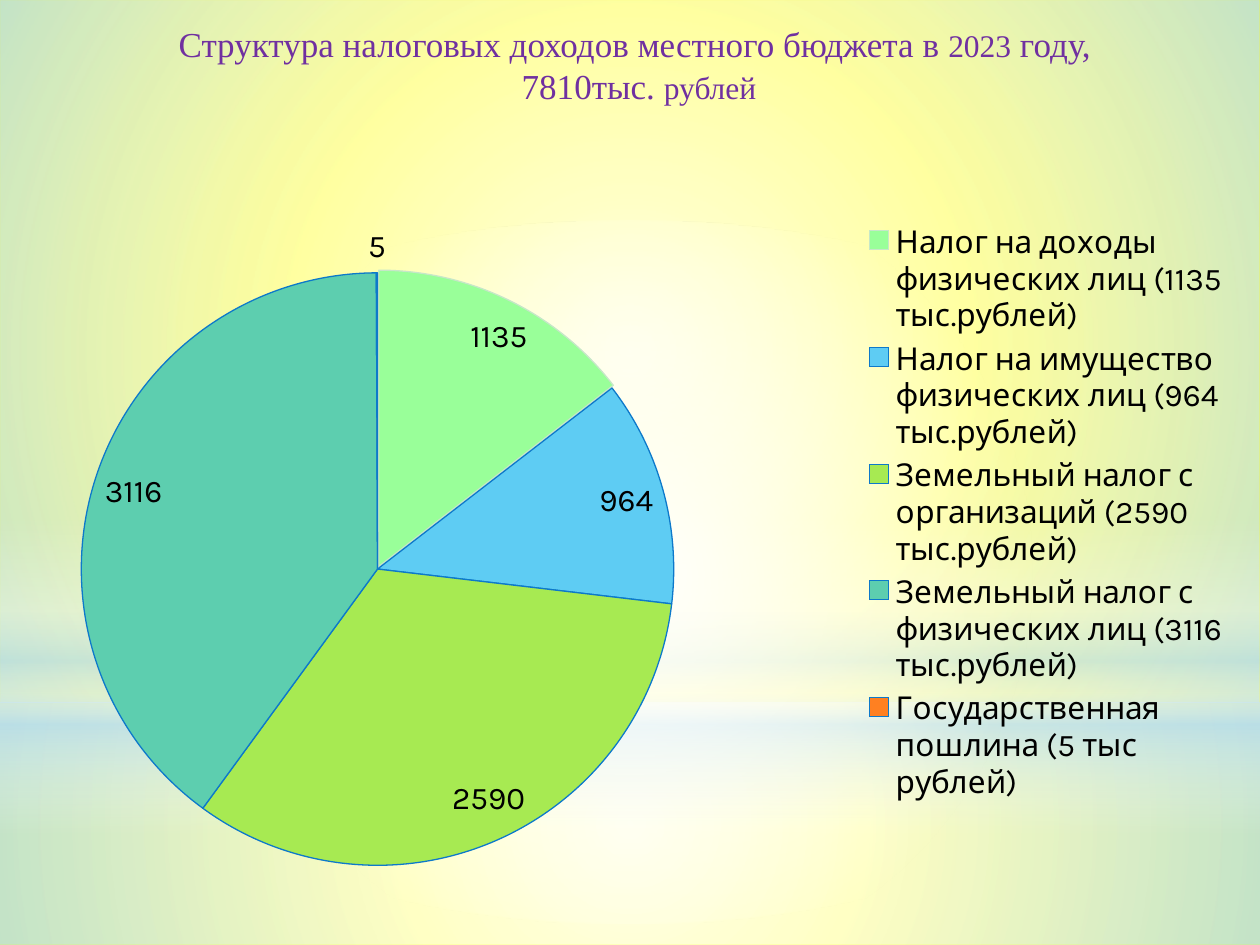
"""Build a slide with a pie chart of local budget tax revenue for 2023."""
from lxml import etree
from pptx import Presentation
from pptx.chart.data import CategoryChartData
from pptx.dml.color import RGBColor
from pptx.enum.chart import XL_CHART_TYPE, XL_LABEL_POSITION as LABEL, XL_LEGEND_POSITION as LEGEND
from pptx.enum.shapes import MSO_SHAPE as SHAPE
from pptx.enum.text import PP_ALIGN
from pptx.oxml import parse_xml
from pptx.oxml.ns import nsdecls, qn
from pptx.util import Emu, Pt

SCALE = 914400 / 126
YELLOW = RGBColor(0xFF, 0xFF, 0x00)
PURPLE = RGBColor(0x70, 0x30, 0xA0)
BLACK = RGBColor(0x00, 0x00, 0x00)
OUTLINE = RGBColor(0x0D, 0x79, 0xCA)
PALE = RGBColor(0xC6, 0xE7, 0xC8)
WHITE = RGBColor(0xFF, 0xFF, 0xFF)
SKY = RGBColor(0xB4, 0xDC, 0xFA)
RADIAL = '<a:path path="circle"><a:fillToRect l="50000" t="50000" r="50000" b="50000"/></a:path>'
VERTICAL = '<a:lin ang="5400000" scaled="0"/>'


def px(*lengths):
    return [Emu(round(length * SCALE)) for length in lengths]


def fill_gradient(shape, stops, direction):
    stop_xml = "".join(
        f'<a:gs pos="{position * 1000}"><a:srgbClr val="{color}">'
        f'<a:alpha val="{alpha * 1000}"/></a:srgbClr></a:gs>'
        for position, color, alpha in stops)
    gradient = parse_xml(f'<a:gradFill {nsdecls("a")} rotWithShape="1">'
                         f'<a:gsLst>{stop_xml}</a:gsLst>{direction}</a:gradFill>')
    shape._element.spPr.find(qn("a:prstGeom")).addnext(gradient)


presentation = Presentation()
presentation.slide_width, presentation.slide_height = px(1260, 945)
slide = presentation.slides.add_slide(presentation.slide_layouts[6])
slide.background.fill.solid()
slide.background.fill.fore_color.rgb = YELLOW

backdrop = [
    (SHAPE.RECTANGLE, (0, 703, 1260, 242), RADIAL,
     [(0, WHITE, 91), (37, WHITE, 76), (100, SKY, 79)]),
    (SHAPE.RECTANGLE, (0, 0, 1260, 703), RADIAL,
     [(0, WHITE, 89), (48, WHITE, 62), (100, SKY, 79)]),
    (SHAPE.RECTANGLE, (0, 519, 1260, 315), VERTICAL,
     [(0, WHITE, 0), (29, WHITE, 30), (45, SKY, 40),
      (55, WHITE, 26), (65, SKY, 60), (100, WHITE, 0)]),
    (SHAPE.OVAL, (0, 221, 1260, 703), RADIAL, [(0, WHITE, 100), (56, WHITE, 0)]),
]
for kind, box, direction, stops in backdrop:
    shape = slide.shapes.add_shape(kind, *px(*box))
    shape.shadow.inherit = False
    shape.line.fill.background()
    fill_gradient(shape, stops, direction)

taxes = [
    ("Налог на доходы физических лиц (1135 тыс.рублей)", 1135, "99FF99"),
    ("Налог на имущество физических лиц (964 тыс.рублей)", 964, "5ECCF3"),
    ("Земельный налог с организаций (2590 тыс.рублей)", 2590, "A7EA52"),
    ("Земельный налог с физических лиц (3116 тыс.рублей)", 3116, "5DCEAF"),
    ("Государственная пошлина (5 тыс рублей)", 5, "FF8021"),
]
chart_data = CategoryChartData()
chart_data.categories = [name for name, value, color in taxes]
chart_data.add_series("Series 1", [value for name, value, color in taxes])
chart = slide.shapes.add_chart(XL_CHART_TYPE.PIE, *px(25, 106, 1218, 814), chart_data).chart
chart.has_title = False
chart.font.name = "Karla"
chart.font.size = Pt(18)
chart.font.color.rgb = BLACK
chart.has_legend = True
chart.legend.position = LEGEND.RIGHT
chart.legend.include_in_layout = False

plot = chart.plots[0]
plot.vary_by_categories = True
series = plot.series[0]
for index, (name, value, color) in enumerate(taxes):
    point_format = series.points[index].format
    point_format.fill.solid()
    point_format.fill.fore_color.rgb = RGBColor.from_string(color)
    point_format.line.color.rgb = OUTLINE if index else PALE
    point_format.line.width = Pt(0.75)
explosion = etree.Element(qn("c:explosion"), val="1")
series._element.find(qn("c:dPt")).find(qn("c:spPr")).addprevious(explosion)
labels = series.data_labels
labels.show_value = True
labels.position = LABEL.BEST_FIT

plot_area = chart._chartSpace.chart.plotArea
for layout in plot_area.findall(qn("c:layout")):
    plot_area.remove(layout)
plot_area.insert(0, parse_xml(
    f'<c:layout {nsdecls("c")}><c:manualLayout><c:layoutTarget val="inner"/>'
    '<c:xMode val="edge"/><c:yMode val="edge"/><c:x val="0.024"/><c:y val="0.205"/>'
    '<c:w val="0.531"/><c:h val="0.728"/></c:manualLayout></c:layout>'))

title = slide.shapes.add_textbox(*px(64, 16, 1150, 97))
text_frame = title.text_frame
text_frame.word_wrap = True
title_lines = [
    [("Структура налоговых доходов местного бюджета в ", 20), ("2023", 18), (" году, ", 20)],
    [("7810тыс. ", 20), ("рублей", 18)],
]
for index, line in enumerate(title_lines):
    paragraph = text_frame.add_paragraph() if index else text_frame.paragraphs[0]
    paragraph.alignment = PP_ALIGN.CENTER
    for text, size in line:
        run = paragraph.add_run()
        run.text = text
        run.font.name = "Times New Roman"
        run.font.size = Pt(size)
        run.font.color.rgb = PURPLE

presentation.save("out.pptx")
